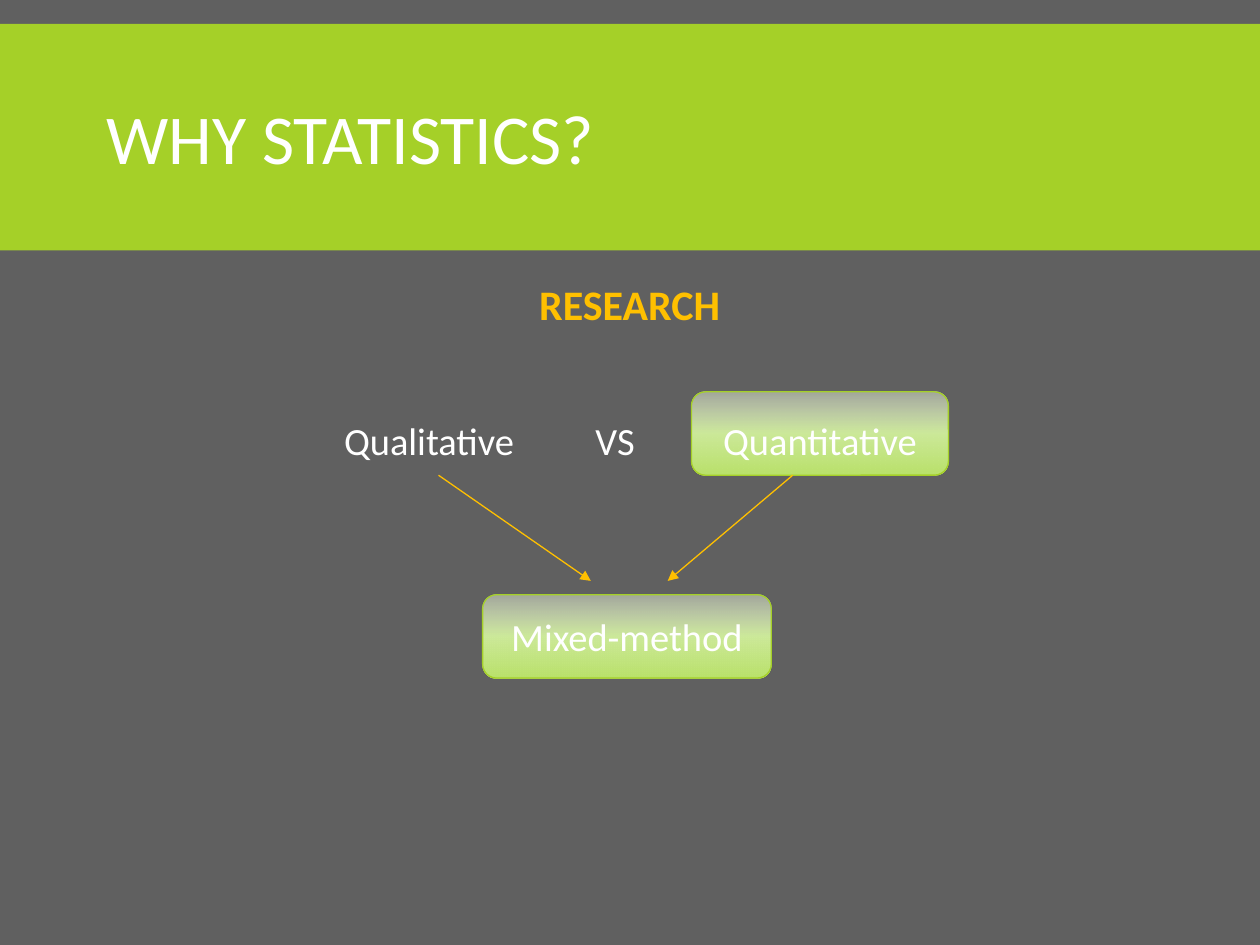
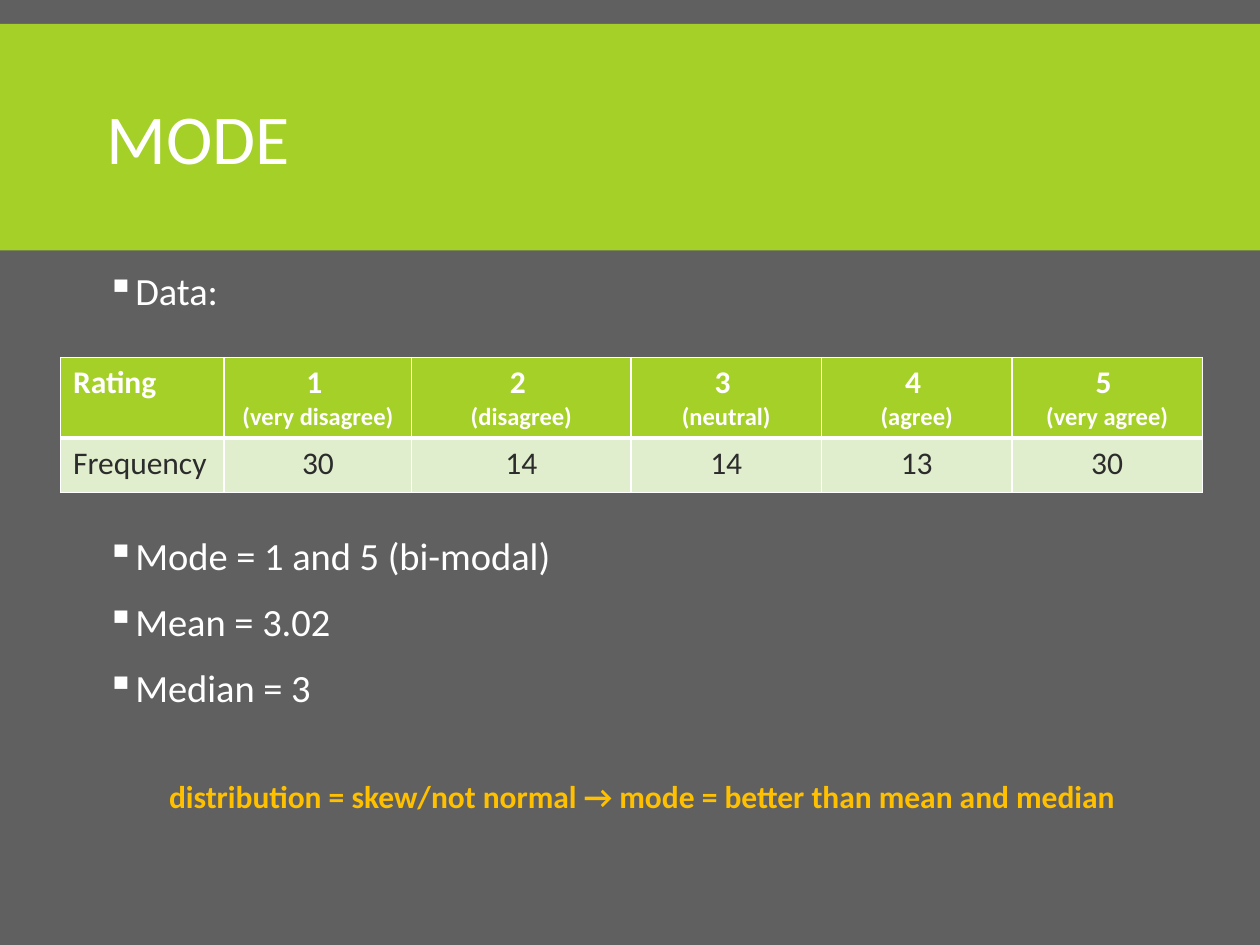
from lxml.etree import SubElement
from pptx import Presentation
from pptx.dml.color import RGBColor
from pptx.enum.shapes import MSO_CONNECTOR as Connector, MSO_SHAPE as Shape
from pptx.enum.text import MSO_ANCHOR as Anchor, PP_ALIGN as Align
from pptx.oxml.ns import qn
from pptx.util import Cm, Pt

FONT = "Calibri"
GREY = RGBColor(0x60, 0x60, 0x60)
GREEN = RGBColor(0xA5, 0xD0, 0x28)
PALE_GREEN = RGBColor(0xE1, 0xEE, 0xCD)
AMBER = RGBColor(0xFF, 0xC0, 0x00)
WHITE = RGBColor(0xFF, 0xFF, 0xFF)
DARK = RGBColor(0x2C, 0x2C, 0x2C)
GLASS_STOPS = [
    (0, RGBColor(0xED, 0xF7, 0xDD), 46),
    (50, RGBColor(0xCD, 0xEA, 0x9A), 100),
    (100, RGBColor(0xBA, 0xE2, 0x6A), 100),
]
MARGIN, BODY_WIDTH = 1.9, 21.59
CHOICE_TOP, CHOICE_HEIGHT = 7.9, 1.68


def write(para, text, size=22, color=WHITE, bold=False, align=Align.LEFT, spacing=None):
    para.alignment = align
    if spacing:
        para.line_spacing = spacing
    span = para.add_run()
    span.text = text
    span.font.name = FONT
    span.font.size = Pt(size)
    span.font.bold = bold
    span.font.color.rgb = color


def add_text(page, text, left, top, width, height, anchor=Anchor.TOP, lowered=0, **style):
    box = page.shapes.add_textbox(Cm(left), Cm(top), Cm(width), Cm(height))
    fill_frame(box.text_frame, text, anchor, lowered, **style)


def fill_frame(frame, text, anchor, lowered=0, **style):
    frame.word_wrap = True
    frame.vertical_anchor = anchor
    frame.margin_top = Cm(0.13 + lowered)
    write(frame.paragraphs[0], text, **style)


def add_bullets(page, items, top, height):
    box = page.shapes.add_textbox(Cm(MARGIN), Cm(top), Cm(BODY_WIDTH), Cm(height))
    frame = box.text_frame
    frame.word_wrap = True
    for index, item in enumerate(items):
        para = frame.add_paragraph() if index else frame.paragraphs[0]
        write(para, item, spacing=0.9)
        para.space_before, para.space_after = Pt(12), Pt(2)
        props = para._p.get_or_add_pPr()
        props.set("marL", str(Cm(0.51)))
        props.set("indent", str(-Cm(0.51)))
        SubElement(props, qn("a:buChar"), char="▪")


def add_glass_box(page, text, left, top, width, lowered=0):
    box = page.shapes.add_shape(
        Shape.ROUNDED_RECTANGLE, Cm(left), Cm(top), Cm(width), Cm(CHOICE_HEIGHT)
    )
    box.shadow.inherit = False
    box.line.color.rgb = GREEN
    box.line.width = Pt(0.75)
    box.fill.gradient()
    box.fill.gradient_angle = 270
    stops = box._element.spPr.find(qn("a:gradFill")).find(qn("a:gsLst"))
    for stop in list(stops):
        stops.remove(stop)
    for position, color, opacity in GLASS_STOPS:
        stop = SubElement(stops, qn("a:gs"), pos=str(position * 1000))
        tint = SubElement(stop, qn("a:srgbClr"), val=str(color))
        SubElement(tint, qn("a:alpha"), val=str(opacity * 1000))
    fill_frame(box.text_frame, text, Anchor.MIDDLE, lowered, align=Align.CENTER)


def add_arrow(page, x1, y1, x2, y2):
    arrow = page.shapes.add_connector(Connector.STRAIGHT, Cm(x1), Cm(y1), Cm(x2), Cm(y2))
    arrow.line.color.rgb = AMBER
    arrow.line.width = Pt(0.75)
    SubElement(arrow.line._get_or_add_ln(), qn("a:tailEnd"), type="triangle")
    SubElement(arrow._element.spPr, qn("a:effectLst"))


def style_cell(cell, fill, bottom=1):
    props = cell._tc.get_or_add_tcPr()
    for side, width in (("L", 1), ("R", 1), ("T", 1), ("B", bottom)):
        edge = SubElement(props, qn(f"a:ln{side}"), w=str(Pt(width)))
        paint = SubElement(edge, qn("a:solidFill"))
        SubElement(paint, qn("a:srgbClr"), val=str(WHITE))
    cell.fill.solid()
    cell.fill.fore_color.rgb = fill


def add_rating_table(page, ratings, widths, heights, left, top):
    frame = page.shapes.add_table(
        2, len(widths), Cm(left), Cm(top), Cm(sum(widths)), Cm(sum(heights))
    )
    table = frame.table
    for column, width in zip(table.columns, widths):
        column.width = Cm(width)
    for row, height in zip(table.rows, heights):
        row.height = Cm(height)
    for cell in table.rows[0].cells:
        style_cell(cell, GREEN, bottom=3)
    for cell in table.rows[1].cells:
        style_cell(cell, PALE_GREEN)
    write(table.cell(0, 0).text_frame.paragraphs[0], "Rating", size=18, bold=True)
    write(table.cell(1, 0).text_frame.paragraphs[0], "Frequency", size=18, color=DARK)
    for rating, (meaning, frequency) in enumerate(ratings, start=1):
        head = table.cell(0, rating).text_frame
        write(head.paragraphs[0], f"{rating} ", size=18, bold=True, align=Align.CENTER)
        write(head.add_paragraph(), f"({meaning})", size=14, bold=True, align=Align.CENTER)
        count = table.cell(1, rating).text_frame.paragraphs[0]
        write(count, str(frequency), size=18, color=DARK, align=Align.CENTER)


def add_page(deck, title):
    page = deck.slides.add_slide(deck.slide_layouts[6])
    page.background.fill.solid()
    page.background.fill.fore_color.rgb = GREY
    band = page.shapes.add_shape(Shape.RECTANGLE, 0, Cm(0.48), deck.slide_width, Cm(4.57))
    band.shadow.inherit = False
    band.fill.solid()
    band.fill.fore_color.rgb = GREEN
    band.line.fill.background()
    add_text(page, title, MARGIN, 0.79, BODY_WIDTH, 4.19,
             anchor=Anchor.MIDDLE, size=40, spacing=0.85)
    return page


def build_why_statistics(deck):
    page = add_page(deck, "WHY STATISTICS?")
    add_text(page, "RESEARCH", MARGIN, 5.59, BODY_WIDTH, 1.2,
             size=24, color=AMBER, bold=True, align=Align.CENTER, spacing=0.9)
    for label, left, width in (("Qualitative", 6.15, 5), ("VS", 11.4, 2)):
        add_text(page, label, left, CHOICE_TOP, width, CHOICE_HEIGHT,
                 anchor=Anchor.MIDDLE, lowered=0.25, align=Align.CENTER)
    add_glass_box(page, "Quantitative", 13.94, CHOICE_TOP, 5.18, lowered=0.25)
    add_glass_box(page, "Mixed-method", 9.73, 11.99, 5.82)
    arrow_top, arrow_end = CHOICE_TOP + CHOICE_HEIGHT, 11.71
    add_arrow(page, 8.84, arrow_top, 11.91, arrow_end)
    add_arrow(page, 15.98, arrow_top, 13.46, arrow_end)


def build_mode(deck):
    page = add_page(deck, "MODE")
    add_bullets(page, ["Data:"], 5.36, 1.2)
    ratings = [("very disagree", 30), ("disagree", 14), ("neutral", 14),
               ("agree", 13), ("very agree", 30)]
    add_rating_table(page, ratings, widths=[3.3, 3.78, 4.42, 3.84, 3.84, 3.84],
                     heights=[1.62, 1.1], left=1.22, top=7.21)
    add_bullets(page, ["Mode = 1 and 5 (bi-modal)", "Mean = 3.02", "Median = 3"], 10.7, 4.2)
    add_text(page, "distribution = skew/not normal → mode = better than mean and median",
             2.18, 15.54, 21.54, 1.03, size=18, color=AMBER, bold=True, align=Align.CENTER)


def main():
    deck = Presentation()
    deck.slide_width, deck.slide_height = Cm(25.4), Cm(19.05)
    build_why_statistics(deck)
    build_mode(deck)
    deck.save("out.pptx")


if __name__ == "__main__":
    main()
